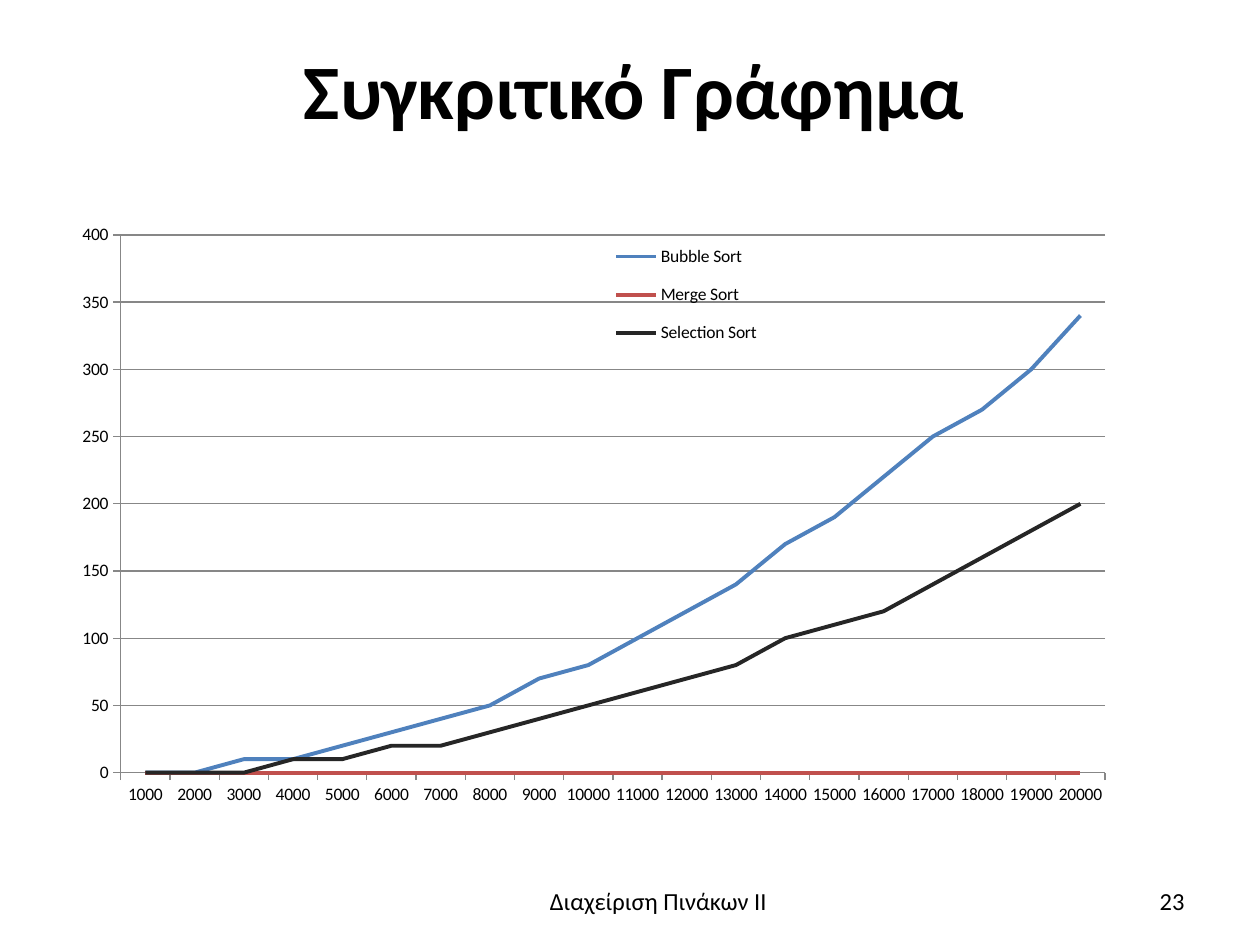
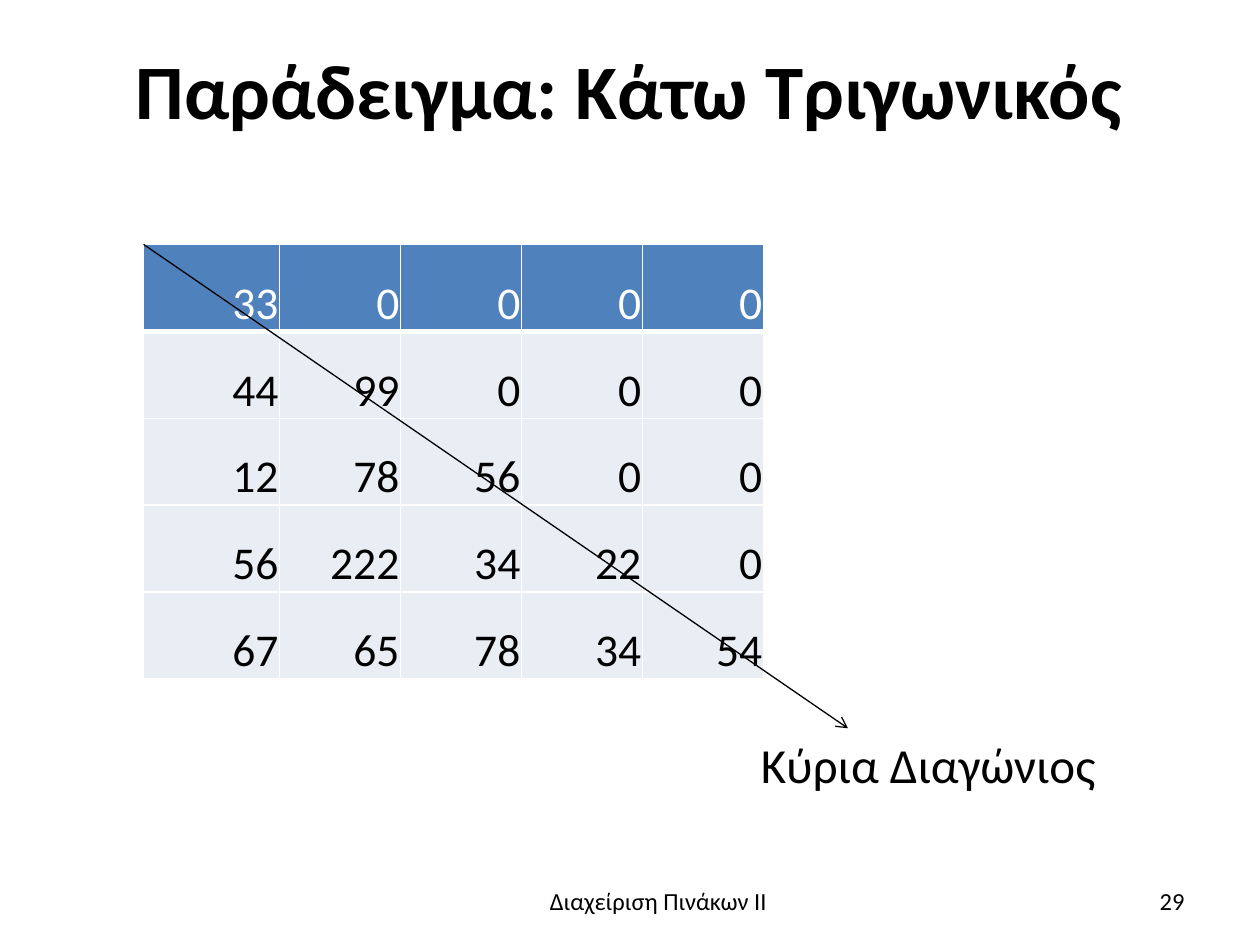
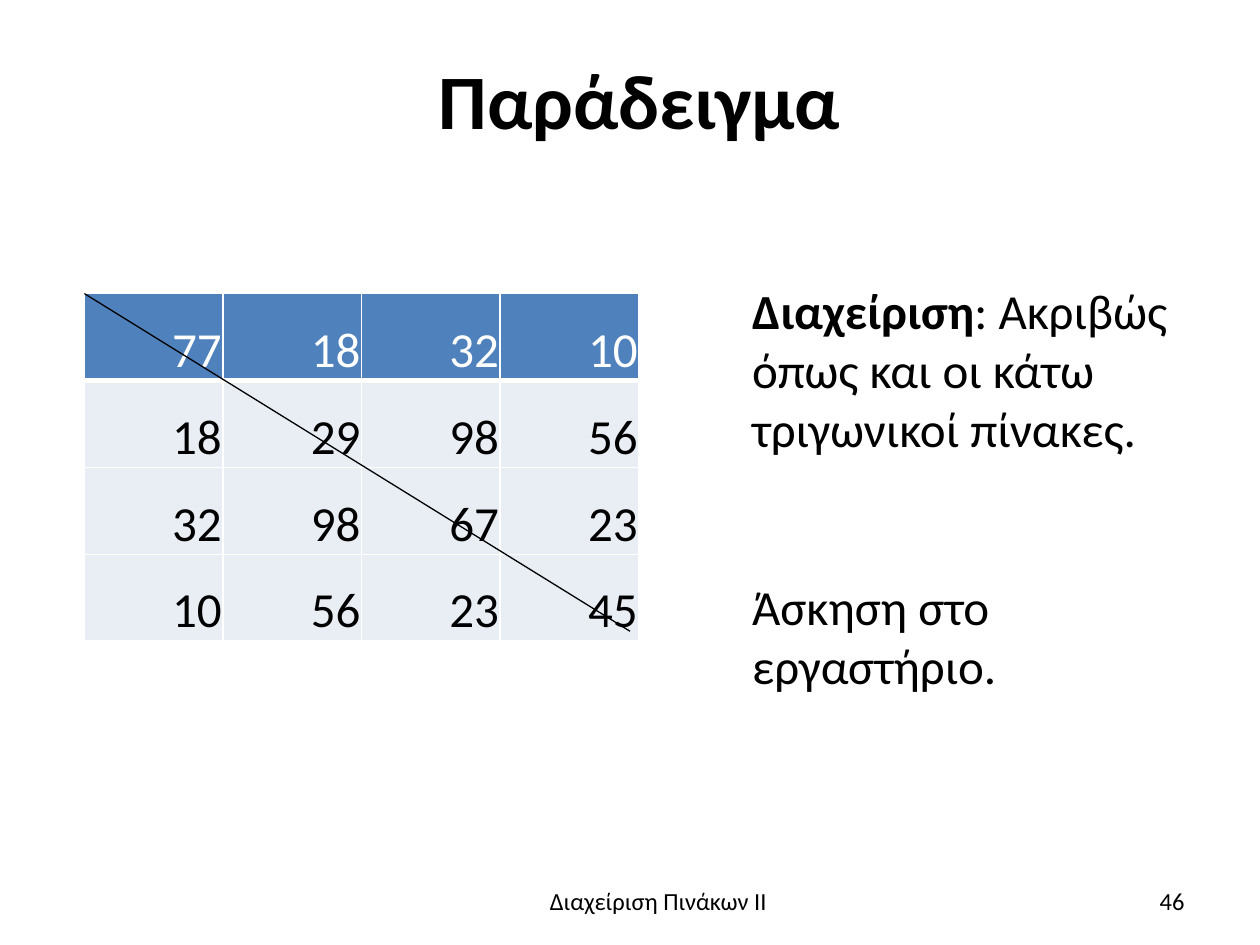
from lxml.etree import SubElement
from pptx import Presentation
from pptx.chart.data import CategoryChartData
from pptx.dml.color import RGBColor
from pptx.enum.chart import XL_CHART_TYPE, XL_LEGEND_POSITION, XL_TICK_MARK
from pptx.enum.shapes import MSO_CONNECTOR
from pptx.enum.text import MSO_ANCHOR as ANCHOR, PP_ALIGN as ALIGN
from pptx.oxml import parse_xml
from pptx.oxml.ns import nsdecls, qn
from pptx.util import Inches, Pt

FONT = "Calibri"
COLORS = {
    "ink": "000000", "paper": "FFFFFF", "header": "4F81BD", "body": "E9EDF4",
    "grid": "878787", "bubble": "4F81BD", "merge": "C0504D", "selection": "262626",
}
FOOTER = "Διαχείριση Πινάκων ΙΙ"

SIZES = range(1000, 20001, 1000)
TIMINGS = [
    ("Bubble Sort", "bubble", [0, 0, 10, 10, 20, 30, 40, 50, 70, 80, 100, 120, 140,
                               170, 190, 220, 250, 270, 300, 340]),
    ("Merge Sort", "merge", [0] * len(SIZES)),
    ("Selection Sort", "selection", [0, 0, 0, 10, 10, 20, 20, 30, 40, 50, 60, 70, 80,
                                     100, 110, 120, 140, 160, 180, 200]),
]
LOWER_TRIANGULAR = [
    [33, 0, 0, 0, 0],
    [44, 99, 0, 0, 0],
    [12, 78, 56, 0, 0],
    [56, 222, 34, 22, 0],
    [67, 65, 78, 34, 54],
]
SYMMETRIC = [
    [77, 18, 32, 10],
    [18, 29, 98, 56],
    [32, 98, 67, 23],
    [10, 56, 23, 45],
]
HANDLING = [
    [("Διαχείριση", True), (": Ακριβώς όπως και οι κάτω τριγωνικοί πίνακες.", False)],
    [("Άσκηση στο εργαστήριο.", False)],
]
ROW_HEIGHT = 0.69


def rgb(name):
    return RGBColor.from_string(COLORS[name])


def inches(values):
    return [Inches(value) for value in values]


def write(frame, text, size=28, color="ink", bold=False, align=ALIGN.LEFT,
          anchor=ANCHOR.TOP, wrap=True, gap=0):
    """Fill a frame from a string or from paragraphs of (text, bold) runs."""
    frame.word_wrap = wrap
    frame.vertical_anchor = anchor
    paragraphs = [[(text, bold)]] if isinstance(text, str) else text
    for index, runs in enumerate(paragraphs):
        paragraph = frame.add_paragraph() if index else frame.paragraphs[0]
        paragraph.alignment = align
        if index:
            paragraph.space_before = Pt(gap)
        for words, strong in runs:
            run = paragraph.add_run()
            run.text = words
            run.font.name = FONT
            run.font.size = Pt(size)
            run.font.bold = strong
            run.font.color.rgb = rgb(color)


def add_text(slide, box, text, **style):
    write(slide.shapes.add_textbox(*inches(box)).text_frame, text, **style)


def add_page(deck, title, title_box, number):
    slide = deck.slides.add_slide(deck.slide_layouts[6])
    add_text(slide, title_box, title, size=44, bold=True, align=ALIGN.CENTER,
             anchor=ANCHOR.MIDDLE)
    add_text(slide, (3.48, 6.98, 3.49, 0.55), FOOTER, size=14, align=ALIGN.CENTER)
    add_text(slide, (7.17, 6.95, 2.33, 0.4), str(number), size=14, align=ALIGN.RIGHT,
             anchor=ANCHOR.MIDDLE)
    return slide


def add_borders(cell, bottom):
    properties = cell._tc.get_or_add_tcPr()
    for side, width in (("L", 1), ("R", 1), ("T", 1), ("B", bottom)):
        border = SubElement(properties, qn(f"a:ln{side}"), w=str(Pt(width)))
        fill = SubElement(border, qn("a:solidFill"))
        SubElement(fill, qn("a:srgbClr"), val=COLORS["paper"])


def add_matrix(slide, left, top, widths, matrix, size):
    table = slide.shapes.add_table(
        len(matrix), len(widths),
        *inches((left, top, sum(widths), ROW_HEIGHT * len(matrix)))).table
    for column, width in zip(table.columns, widths):
        column.width = Inches(width)
    for r, values in enumerate(matrix):
        table.rows[r].height = Inches(ROW_HEIGHT)
        for c, value in enumerate(values):
            cell = table.cell(r, c)
            add_borders(cell, bottom=1 if r else 3)
            cell.fill.solid()
            cell.fill.fore_color.rgb = rgb("body" if r else "header")
            cell.margin_left = cell.margin_right = cell.margin_top = Inches(0.01)
            cell.margin_bottom = 0
            write(cell.text_frame, str(value), size=size, align=ALIGN.RIGHT,
                  color="ink" if r else "paper")
            cell.vertical_anchor = ANCHOR.BOTTOM


def add_diagonal(slide, start, end, arrow=False):
    diagonal = slide.shapes.add_connector(MSO_CONNECTOR.STRAIGHT, *inches(start + end))
    diagonal.line.color.rgb = rgb("ink")
    diagonal.line.width = Pt(0.75)
    if arrow:
        SubElement(diagonal.line._get_or_add_ln(), qn("a:tailEnd"), type="arrow")
    SubElement(diagonal._element.spPr, qn("a:effectLst"))


def place(part, index, x, y, w, h, inner=False):
    """Give a chart part a fixed place, in fractions of the chart."""
    for old in part.findall(qn("c:layout")):
        part.remove(old)
    target = '<c:layoutTarget val="inner"/>' if inner else ""
    part.insert(index, parse_xml(
        f'<c:layout {nsdecls("c")}><c:manualLayout>{target}'
        '<c:xMode val="edge"/><c:yMode val="edge"/>'
        f'<c:x val="{x}"/><c:y val="{y}"/><c:w val="{w}"/><c:h val="{h}"/>'
        '</c:manualLayout></c:layout>'))


def add_timing_chart(slide, box):
    data = CategoryChartData()
    data.categories = [str(size) for size in SIZES]
    for name, _, values in TIMINGS:
        data.add_series(name, values)
    chart = slide.shapes.add_chart(XL_CHART_TYPE.LINE, *inches(box), data).chart
    chart.has_title = False
    chart.font.name = FONT
    chart.font.size = Pt(10)
    chart.font.color.rgb = rgb("ink")

    chart.plots[0].vary_by_categories = False
    for series, (_, color, _) in zip(chart.plots[0].series, TIMINGS):
        series.smooth = False
        series.format.line.color.rgb = rgb(color)
        series.format.line.width = Pt(2.25)

    scale = chart.value_axis
    scale.minimum_scale, scale.maximum_scale, scale.major_unit = 0, 400, 50
    scale.has_major_gridlines = True
    for axis in (chart.category_axis, scale):
        axis.major_tick_mark = XL_TICK_MARK.OUTSIDE
    for rule in (chart.category_axis, scale, scale.major_gridlines):
        rule.format.line.color.rgb = rgb("grid")
        rule.format.line.width = Pt(0.75)

    chart.has_legend = True
    chart.legend.position = XL_LEGEND_POSITION.RIGHT
    chart.legend.include_in_layout = False
    place(chart._chartSpace.find(f".//{qn('c:plotArea')}"), 0,
          0.05, 0.09, 0.87, 0.81, inner=True)
    place(chart.legend._element, 1, 0.46, 0.08, 0.18, 0.2)


def main():
    deck = Presentation()
    deck.slide_width, deck.slide_height = inches((10, 7.5))

    comparison = add_page(deck, "Συγκριτικό Γράφημα", (0.43, 0.01, 9.21, 1.38), 23)
    add_timing_chart(comparison, (0.51, 1.39, 8.98, 5.27))

    triangular = add_page(deck, "Παράδειγμα: Κάτω Τριγωνικός",
                          (0.35, 0.01, 9.29, 1.38), 29)
    add_matrix(triangular, 1.14, 1.94, [1.08] + [0.96] * 4, LOWER_TRIANGULAR, size=26)
    add_diagonal(triangular, (1.14, 1.94), (6.73, 5.78), arrow=True)
    add_text(triangular, (5.94, 5.78, 2.88, 0.57), "Κύρια Διαγώνιος", wrap=False)

    symmetric = add_page(deck, "Παράδειγμα", (0.43, 0.09, 9.29, 1.38), 46)
    add_matrix(symmetric, 0.67, 2.33, [1.1] * 4, SYMMETRIC, size=28)
    add_diagonal(symmetric, (0.67, 2.33), (5, 5.01))
    add_text(symmetric, (5.87, 2.18, 3.62, 3.4), HANDLING, gap=68)

    deck.save("out.pptx")


if __name__ == "__main__":
    main()
